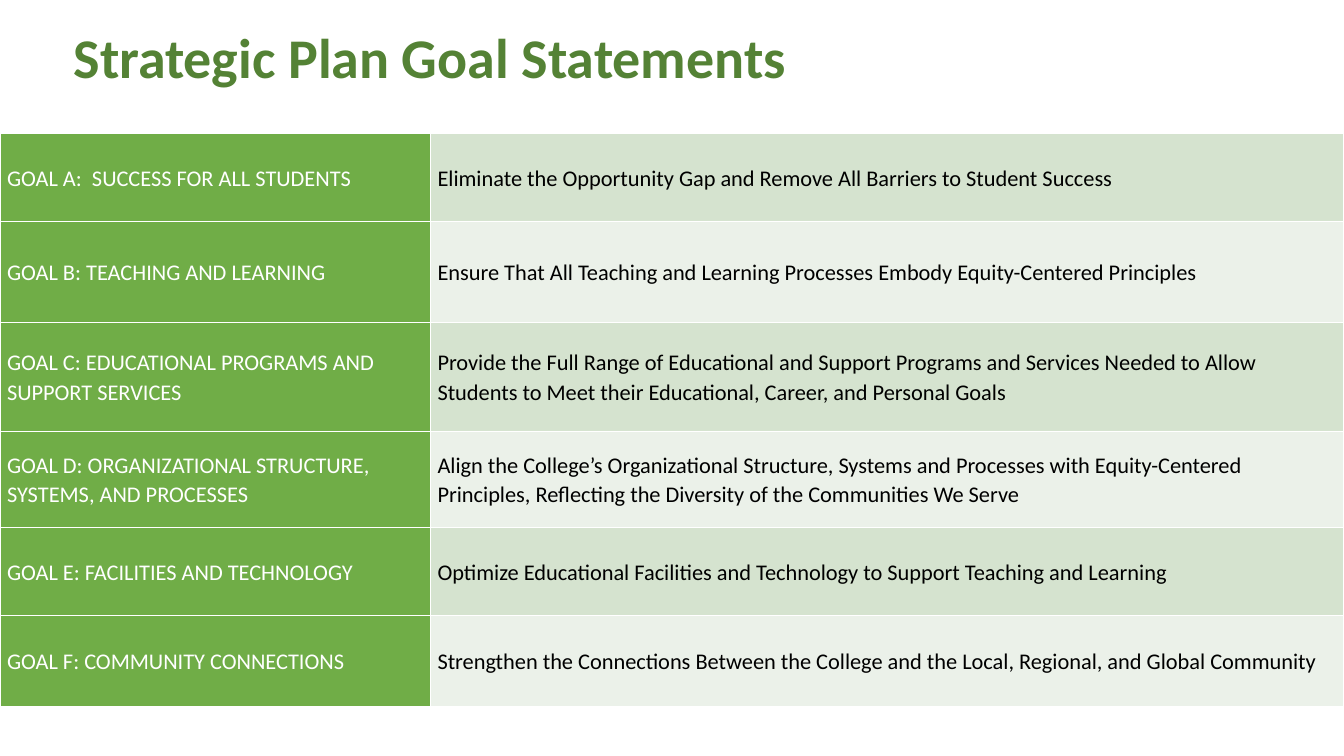
"""Build the slide that lists the strategic plan goal statements in a table."""
from lxml.etree import SubElement
from pptx import Presentation
from pptx.dml.color import RGBColor
from pptx.enum.text import MSO_ANCHOR, PP_ALIGN
from pptx.oxml.ns import qn
from pptx.util import Inches, Pt

DARK_GREEN = RGBColor(0x54, 0x82, 0x35)
GREEN = RGBColor(0x70, 0xAD, 0x47)
PALE_GREEN = RGBColor(0xD5, 0xE3, 0xCF)
PALEST_GREEN = RGBColor(0xEB, 0xF1, 0xE9)
WHITE = RGBColor(0xFF, 0xFF, 0xFF)
BLACK = RGBColor(0x00, 0x00, 0x00)

GOALS = [
    (0.88, "GOAL A:  SUCCESS FOR ALL STUDENTS",
     "Eliminate the Opportunity Gap and Remove All Barriers to Student Success"),
    (1.0, "GOAL B: TEACHING AND LEARNING",
     "Ensure That All Teaching and Learning Processes Embody Equity-Centered Principles"),
    (1.08, "GOAL C: EDUCATIONAL PROGRAMS AND SUPPORT SERVICES",
     "Provide the Full Range of Educational and Support Programs and Services Needed "
     "to Allow Students to Meet their Educational, Career, and Personal Goals"),
    (0.95, "GOAL D: ORGANIZATIONAL STRUCTURE, SYSTEMS, AND PROCESSES",
     "Align the College’s Organizational Structure, Systems and Processes with "
     "Equity-Centered Principles, Reflecting the Diversity of the Communities We Serve"),
    (0.88, "GOAL E: FACILITIES AND TECHNOLOGY",
     "Optimize Educational Facilities and Technology to Support Teaching and Learning"),
    (0.9, "GOAL F: COMMUNITY CONNECTIONS",
     "Strengthen the Connections Between the College and the Local, Regional, "
     "and Global Community"),
]
COLUMN_WIDTHS = [4.27, 9.06]
CELL_FORMAT = {
    "vertical_anchor": MSO_ANCHOR.MIDDLE,
    "margin_left": Inches(0.07),
    "margin_right": Inches(0.07),
    "margin_top": 0,
    "margin_bottom": 0,
}
TITLE_FONT = {"name": "Calibri", "size": Pt(40), "bold": True}
GOAL_FONT = {"name": "Calibri", "size": Pt(16)}


def apply_format(target, values):
    for attribute, value in values.items():
        setattr(target, attribute, value)


def add_borders(cell):
    properties = cell._tc.get_or_add_tcPr()
    for side in ("a:lnL", "a:lnR", "a:lnT", "a:lnB"):
        border = SubElement(properties, qn(side), w=str(Pt(1)))
        fill = SubElement(border, qn("a:solidFill"))
        SubElement(fill, qn("a:srgbClr"), val=str(WHITE))


presentation = Presentation()
presentation.slide_width = Inches(13.33)
presentation.slide_height = Inches(7.5)
slide = presentation.slides.add_slide(presentation.slide_layouts[5])

heading = slide.shapes.title
apply_format(heading, {"left": Inches(0.63), "top": Inches(0.19),
                       "width": Inches(11.5), "height": Inches(0.82)})
heading.text_frame.text = "Strategic Plan Goal Statements"
heading.text_frame.vertical_anchor = MSO_ANCHOR.MIDDLE
heading_line = heading.text_frame.paragraphs[0]
apply_format(heading_line, {"alignment": PP_ALIGN.LEFT, "line_spacing": 0.9})
apply_format(heading_line.font, TITLE_FONT)
heading_line.font.color.rgb = DARK_GREEN

goal_table = slide.shapes.add_table(
    len(GOALS), len(COLUMN_WIDTHS), 0, Inches(1.32), Inches(sum(COLUMN_WIDTHS)),
    Inches(sum(height for height, _, _ in GOALS))).table
apply_format(goal_table, {"first_row": False, "horz_banding": False})
for column, width in zip(goal_table.columns, COLUMN_WIDTHS):
    column.width = Inches(width)

for index, (height, goal, statement) in enumerate(GOALS):
    goal_table.rows[index].height = Inches(height)
    band = PALEST_GREEN if index % 2 else PALE_GREEN
    contents = [(goal, GREEN, WHITE), (statement, band, BLACK)]
    for cell, (wording, background, ink) in zip(goal_table.rows[index].cells, contents):
        cell.text = wording
        apply_format(cell, CELL_FORMAT)
        add_borders(cell)
        cell.fill.solid()
        cell.fill.fore_color.rgb = background
        line = cell.text_frame.paragraphs[0]
        line.line_spacing = 1.07
        apply_format(line.font, GOAL_FONT)
        line.font.color.rgb = ink

presentation.save("out.pptx")
